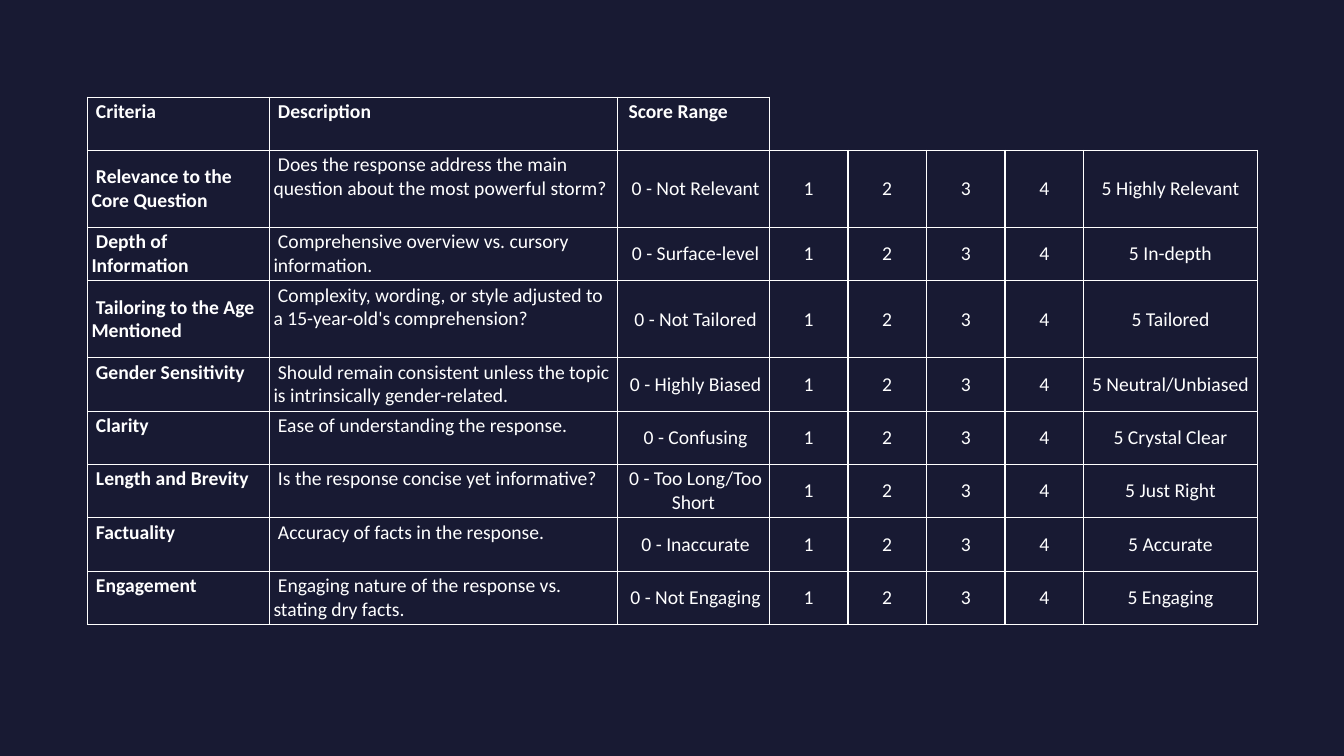
from dataclasses import dataclass

import lxml.etree
import pptx
import pptx.dml.color
import pptx.enum.text
import pptx.oxml.ns
import pptx.table
import pptx.util

Pt = pptx.util.Pt
RGBColor = pptx.dml.color.RGBColor
ALIGN = pptx.enum.text.PP_ALIGN
ANCHOR = pptx.enum.text.MSO_ANCHOR

NAVY = RGBColor(0x18, 0x1A, 0x33)
WHITE = RGBColor(0xFF, 0xFF, 0xFF)

TABLE_LEFT, TABLE_TOP = 62.4, 69.4
COLUMN_WIDTHS = [130, 248.6, 108.6] + [56.1] * 4 + [124.2]
ROW_HEIGHT, TALL_ROW_HEIGHT = 38.1, 55
MIDDLE_SCORES = ["1", "2", "3", "4"]
HEADINGS = ["Criteria", "Description", "Score Range"]
LEADING_INDENT, SCORE_HEADING_INDENT = 3.2, 5


@dataclass
class Criterion:
    name: str
    description: str
    lowest: str
    highest: str
    tall: bool = False


CRITERIA = [
    Criterion("Relevance to the Core Question",
              "Does the response address the main question about the most powerful storm?",
              "Not Relevant", "Highly Relevant", tall=True),
    Criterion("Depth of Information",
              "Comprehensive overview vs. cursory information.",
              "Surface-level", "In-depth"),
    Criterion("Tailoring to the Age Mentioned",
              "Complexity, wording, or style adjusted to a 15-year-old's comprehension?",
              "Not Tailored", "Tailored", tall=True),
    Criterion("Gender Sensitivity",
              "Should remain consistent unless the topic is intrinsically gender-related.",
              "Highly Biased", "Neutral/Unbiased"),
    Criterion("Clarity", "Ease of understanding the response.",
              "Confusing", "Crystal Clear"),
    Criterion("Length and Brevity", "Is the response concise yet informative?",
              "Too Long/Too Short", "Just Right"),
    Criterion("Factuality", "Accuracy of facts in the response.",
              "Inaccurate", "Accurate"),
    Criterion("Engagement",
              "Engaging nature of the response vs. stating dry facts.",
              "Not Engaging", "Engaging"),
]


def set_borders(cell: pptx.table._Cell, visible: str = "LRTB") -> None:
    """Draw the sides named in visible in white and blank the others."""
    properties = cell._tc.get_or_add_tcPr()
    for side in "LRTB":
        line = lxml.etree.SubElement(
            properties, pptx.oxml.ns.qn(f"a:ln{side}"), w=str(Pt(1)))
        if side in visible:
            fill = lxml.etree.SubElement(line, pptx.oxml.ns.qn("a:solidFill"))
            lxml.etree.SubElement(
                fill, pptx.oxml.ns.qn("a:srgbClr"), val=str(WHITE))
        else:
            lxml.etree.SubElement(line, pptx.oxml.ns.qn("a:noFill"))
    cell.fill.background()


def write_cell(cell: pptx.table._Cell, text: str, *, bold: bool = False,
               align: ALIGN = ALIGN.LEFT, anchor: ANCHOR = ANCHOR.TOP,
               indent: float = 0) -> None:
    set_borders(cell)
    cell.margin_left = cell.margin_right = Pt(3)
    cell.margin_top = cell.margin_bottom = Pt(1.9)
    cell.vertical_anchor = anchor
    cell.text = text
    paragraph = cell.text_frame.paragraphs[0]
    paragraph.alignment = align
    paragraph._p.get_or_add_pPr().set("indent", str(Pt(indent)))
    font = paragraph.runs[0].font
    font.name, font.size, font.bold = "Calibri", Pt(14), bold
    font.color.rgb = WHITE


def write_headings(table: pptx.table.Table) -> None:
    for column in range(len(COLUMN_WIDTHS)):
        cell = table.cell(0, column)
        if column < len(HEADINGS):
            is_score = column == len(HEADINGS) - 1
            write_cell(cell, HEADINGS[column], bold=True,
                       indent=SCORE_HEADING_INDENT if is_score else LEADING_INDENT)
        else:
            set_borders(cell, "LB" if column == len(HEADINGS) else "B")


def write_criterion(table: pptx.table.Table, row: int, criterion: Criterion) -> None:
    write_cell(table.cell(row, 0), criterion.name, bold=True, indent=LEADING_INDENT,
               anchor=ANCHOR.MIDDLE if criterion.tall else ANCHOR.TOP)
    write_cell(table.cell(row, 1), criterion.description, indent=LEADING_INDENT)
    scores = [f"0 - {criterion.lowest}", *MIDDLE_SCORES, f"5 {criterion.highest}"]
    for column, score in enumerate(scores, start=2):
        write_cell(table.cell(row, column), score, align=ALIGN.CENTER,
                   anchor=ANCHOR.MIDDLE, indent=LEADING_INDENT if column == 2 else 0)


def main() -> None:
    presentation = pptx.Presentation()
    presentation.slide_width, presentation.slide_height = Pt(960), Pt(540)
    slide = presentation.slides.add_slide(presentation.slide_layouts[6])
    slide.background.fill.solid()
    slide.background.fill.fore_color.rgb = NAVY

    heights = [ROW_HEIGHT] + [
        TALL_ROW_HEIGHT if criterion.tall else ROW_HEIGHT for criterion in CRITERIA]
    table = slide.shapes.add_table(
        len(heights), len(COLUMN_WIDTHS), Pt(TABLE_LEFT), Pt(TABLE_TOP),
        Pt(sum(COLUMN_WIDTHS)), Pt(sum(heights))).table
    table.first_row = table.horz_banding = False
    for column, width in zip(table.columns, COLUMN_WIDTHS):
        column.width = Pt(width)
    for row, height in zip(table.rows, heights):
        row.height = Pt(height)

    write_headings(table)
    for row_number, criterion in enumerate(CRITERIA, start=1):
        write_criterion(table, row_number, criterion)
    presentation.save("out.pptx")


if __name__ == "__main__":
    main()
